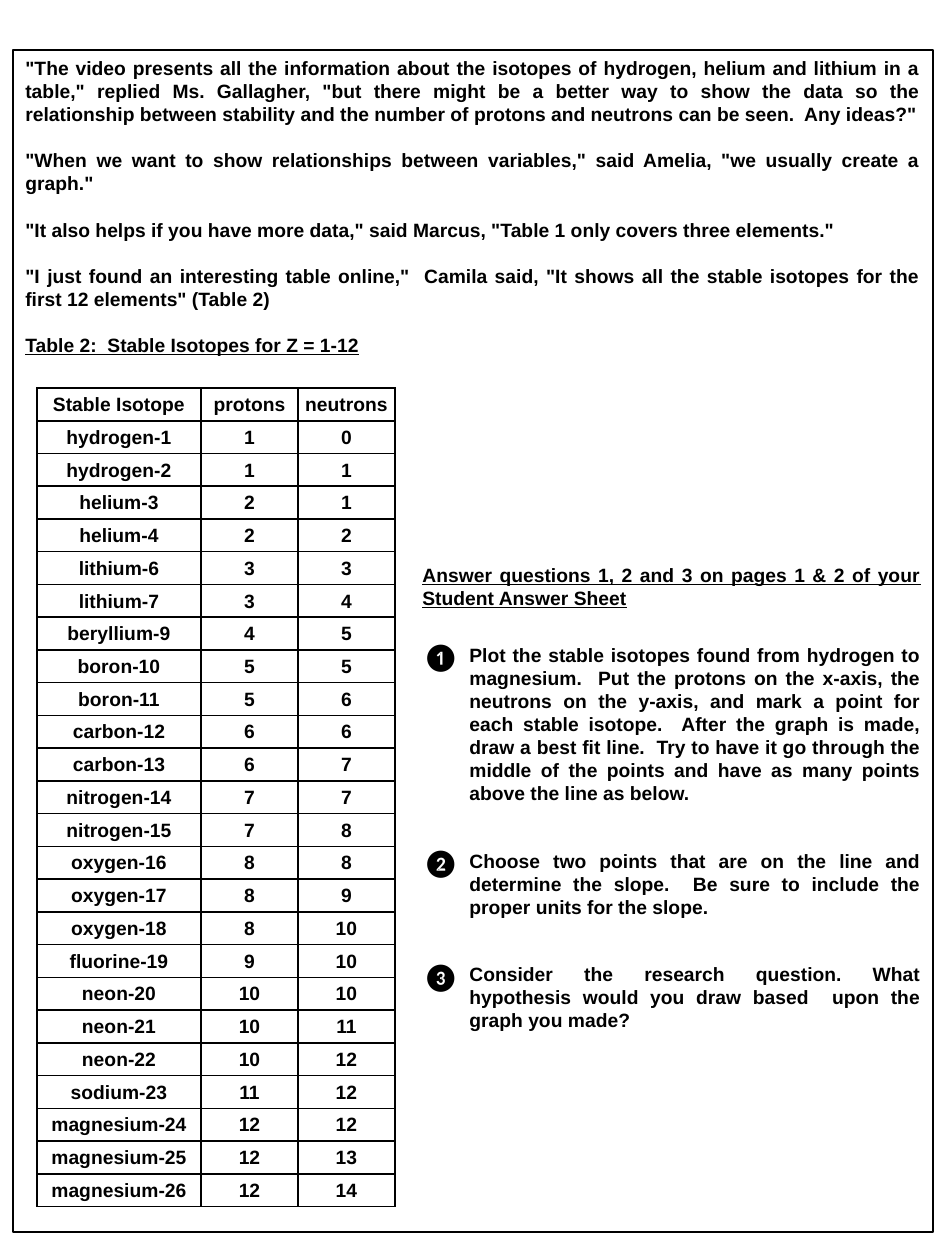
from dataclasses import dataclass

from lxml.etree import fromstring
from pptx import Presentation
from pptx.dml.color import RGBColor
from pptx.enum.shapes import MSO_SHAPE
from pptx.enum.text import MSO_ANCHOR, MSO_AUTO_SIZE, PP_ALIGN
from pptx.util import Pt

PX = 914400 / 126
DRAWING_NS = "http://schemas.openxmlformats.org/drawingml/2006/main"


@dataclass(frozen=True)
class Theme:
    ink: RGBColor = RGBColor(0, 0, 0)
    body_font: str = "Arial"
    badge_font: str = "Calibri"
    body_size: float = 11
    badge_size: float = 16
    leading: float = 13.2
    frame_line: float = 0.75
    grid_line: float = 1


theme = Theme()


def px(*lengths):
    return [round(length * PX) for length in lengths]


def write(para, text, align, underline=False):
    """Fill a paragraph with bold body text."""
    para.text = text
    para.alignment = align
    for span in para.runs:
        span.font.name = theme.body_font
        span.font.size = Pt(theme.body_size)
        span.font.bold = True
        span.font.underline = underline
        span.font.color.rgb = theme.ink


story = [
    '"The video presents all the information about the isotopes of hydrogen, helium and '
    'lithium in a table," replied Ms. Gallagher, "but there might be a better way to show '
    'the data so the relationship between stability and the number of protons and neutrons '
    'can be seen.  Any ideas?"',
    '"When we want to show relationships between variables," said Amelia, "we usually '
    'create a graph."',
    '"It also helps if you have more data," said Marcus, "Table 1 only covers three elements."',
    '"I just found an interesting table online,"  Camila said, "It shows all the stable '
    'isotopes for the first 12 elements" (Table 2)',
    "Table 2:  Stable Isotopes for Z = 1-12",
]
# Element, protons, mass numbers of its stable isotopes
elements = [
    ("hydrogen", 1, [1, 2]),
    ("helium", 2, [3, 4]),
    ("lithium", 3, [6, 7]),
    ("beryllium", 4, [9]),
    ("boron", 5, [10, 11]),
    ("carbon", 6, [12, 13]),
    ("nitrogen", 7, [14, 15]),
    ("oxygen", 8, [16, 17, 18]),
    ("fluorine", 9, [19]),
    ("neon", 10, [20, 21, 22]),
    ("sodium", 11, [23]),
    ("magnesium", 12, [24, 25, 26]),
]
instructions = [
    "Answer questions 1, 2 and 3 on pages 1 & 2 of your Student Answer Sheet",
    "Plot the stable isotopes found from hydrogen to magnesium.  Put the protons on the "
    "x-axis, the neutrons on the y-axis, and mark a point for each stable isotope.  After "
    "the graph is made, draw a best fit line.  Try to have it go through the middle of the "
    "points and have as many points above the line as below. ",
    "Choose two points that are on the line and determine the slope.  Be sure to include "
    "the proper units for the slope.",
    "Consider the research question. What hypothesis would you draw based  upon the graph "
    "you made?",
]
badges = [("❶", 633), ("❷", 839), ("❸", 953)]

deck = Presentation()
deck.slide_width, deck.slide_height = px(945, 1260)
page = deck.slides.add_slide(deck.slide_layouts[6])

# Framed story
frame = page.shapes.add_shape(MSO_SHAPE.RECTANGLE, *px(13, 50, 920, 1182))
frame.shadow.inherit = False
frame.fill.background()
frame.line.color.rgb = theme.ink
frame.line.width = Pt(theme.frame_line)
frame.text_frame.word_wrap = True
frame.text_frame.vertical_anchor = MSO_ANCHOR.TOP
frame.text_frame.text = "\n".join(story)
for para, text in zip(frame.text_frame.paragraphs, story):
    write(para, text, PP_ALIGN.JUSTIFY, underline=text == story[-1])
    para.line_spacing = Pt(theme.leading)
    if text != story[-1]:
        para.space_after = Pt(theme.leading)

# Isotope table
rows = [("Stable Isotope", "protons", "neutrons")]
for element, protons, masses in elements:
    rows += [(f"{element}-{mass}", str(protons), str(mass - protons)) for mass in masses]
table = page.shapes.add_table(len(rows), 3, *px(37, 388, 358, 819)).table
table.first_row = table.horz_banding = False
for column, width in zip(table.columns, px(164, 97, 97)):
    column.width = width
for row_index, row in enumerate(rows):
    for column_index, text in enumerate(row):
        cell = table.cell(row_index, column_index)
        cell.margin_left, cell.margin_top, cell.margin_right, cell.margin_bottom = px(1, 1, 1, 0)
        cell.vertical_anchor = MSO_ANCHOR.MIDDLE
        write(cell.text_frame.paragraphs[0], text, PP_ALIGN.CENTER)
        cell.fill.background()
        for position, side in enumerate(("lnL", "lnR", "lnT", "lnB")):
            border = fromstring(
                f'<a:{side} xmlns:a="{DRAWING_NS}" w="{Pt(theme.grid_line)}">'
                f'<a:solidFill><a:srgbClr val="{theme.ink}"/></a:solidFill></a:{side}>'
            )
            cell._tc.get_or_add_tcPr().insert(position, border)

# Questions
questions = page.shapes.add_textbox(*px(410, 557, 523, 503))
questions.text_frame.word_wrap = True
questions.text_frame.text = "\n".join(instructions)
for index, para in enumerate(questions.text_frame.paragraphs):
    write(para, instructions[index], PP_ALIGN.JUSTIFY, underline=index == 0)
    para.line_spacing = Pt(theme.leading)
    if index == 0:
        para.space_after = Pt(theme.leading + 6)
    else:
        para.space_after = Pt(theme.leading + 12 if index < 3 else 6)
        properties = para._p.get_or_add_pPr()
        properties.set("marL", str(px(47)[0]))
        properties.set("indent", "0")

for digit, top in badges:
    badge = page.shapes.add_textbox(*px(410, top, 63, 47))
    badge.text_frame.word_wrap = False
    badge.text_frame.auto_size = MSO_AUTO_SIZE.SHAPE_TO_FIT_TEXT
    badge.text_frame.text = digit
    span = badge.text_frame.paragraphs[0].runs[0]
    span.font.name = theme.badge_font
    span.font.size = Pt(theme.badge_size)
    span.font.color.rgb = theme.ink

deck.save("out.pptx")
